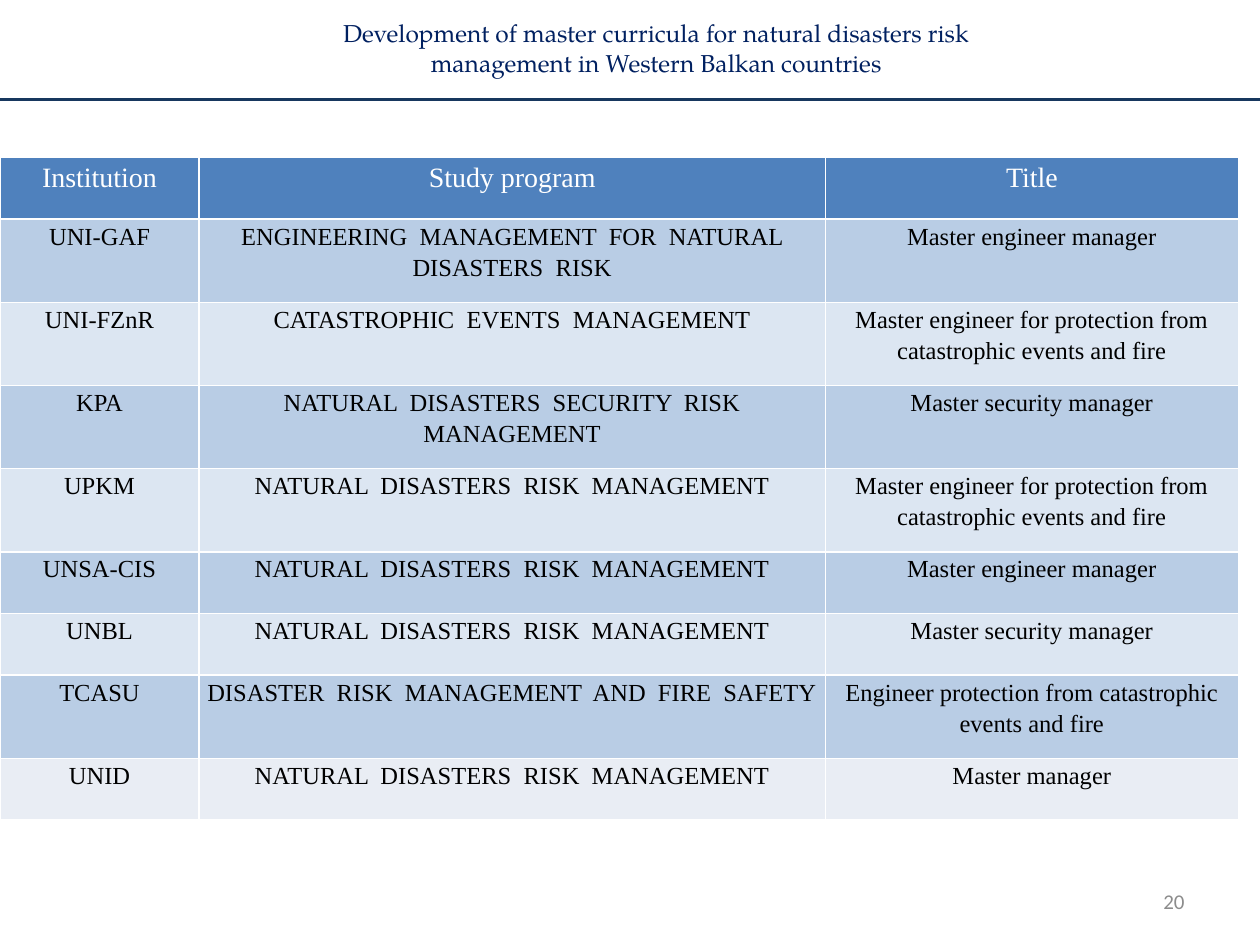
from typing import NamedTuple

from lxml import etree
from pptx import Presentation
from pptx.dml.color import RGBColor
from pptx.enum import shapes, text
from pptx.oxml.ns import qn
from pptx.util import Inches, Pt

NAVY = RGBColor(0x00, 0x20, 0x60)
RULE_BLUE = RGBColor(0x17, 0x37, 0x5E)
HEADER_BLUE = RGBColor(0x4F, 0x81, 0xBD)
BAND_DARK = RGBColor(0xB9, 0xCD, 0xE5)
BAND_LIGHT = RGBColor(0xDC, 0xE6, 0xF2)
LAST_ROW = RGBColor(0xE9, 0xED, 0xF4)
WHITE = RGBColor(0xFF, 0xFF, 0xFF)
BLACK = RGBColor(0x00, 0x00, 0x00)
GREY = RGBColor(0x8C, 0x8C, 0x8C)

COLUMN_WIDTHS = (1.58, 4.97, 3.28)
SHORT_ROW, TALL_ROW = 0.49, 0.66


class Program(NamedTuple):
    institution: str
    study: str
    title: str
    height: float = SHORT_ROW


class TextStyle(NamedTuple):
    font: str
    size: float
    color: RGBColor
    align: text.PP_ALIGN = text.PP_ALIGN.CENTER


COMMON_STUDY = "NATURAL  DISASTERS  RISK  MANAGEMENT"
FIRE_ENGINEER = "Master engineer for protection from catastrophic events and fire"
HEADER = Program("Institution", "Study program", "Title")
PROGRAMS = (
    Program("UNI-GAF", "ENGINEERING  MANAGEMENT  FOR  NATURAL DISASTERS  RISK",
            "Master engineer manager", TALL_ROW),
    Program("UNI-FZnR", "CATASTROPHIC  EVENTS  MANAGEMENT", FIRE_ENGINEER, TALL_ROW),
    Program("KPA", "NATURAL  DISASTERS  SECURITY  RISK MANAGEMENT",
            "Master security manager", TALL_ROW),
    Program("UPKM", COMMON_STUDY, FIRE_ENGINEER, TALL_ROW),
    Program("UNSA-CIS", COMMON_STUDY, "Master engineer manager"),
    Program("UNBL", COMMON_STUDY, "Master security manager"),
    Program("TCASU", "DISASTER  RISK  MANAGEMENT  AND  FIRE  SAFETY",
            "Engineer protection from catastrophic events and fire", TALL_ROW),
    Program("UNID", COMMON_STUDY, "Master manager"),
)

HEADER_STYLE = TextStyle("Times New Roman", 16, WHITE)
BODY_STYLE = TextStyle("Times New Roman", 14, BLACK)
TITLE_STYLE = TextStyle("TeX Gyre Pagella", 14, NAVY)
NUMBER_STYLE = TextStyle("Calibri", 12, GREY, text.PP_ALIGN.RIGHT)


def write(frame, words: str, style: TextStyle):
    """Fill a text frame with one styled paragraph and return it."""
    frame.text = words
    frame.word_wrap = True
    para = frame.paragraphs[0]
    para.alignment = style.align
    para.font.name = style.font
    para.font.size = Pt(style.size)
    para.font.color.rgb = style.color
    para.font.bold = False
    return para


def add_borders(cell, color: RGBColor, width: float) -> None:
    """Put the same line on all four sides of a cell, before its fill."""
    properties = cell._tc.get_or_add_tcPr()
    for index, side in enumerate(("a:lnL", "a:lnR", "a:lnT", "a:lnB")):
        line = etree.Element(qn(side), w=str(Pt(width)))
        fill = etree.SubElement(line, qn("a:solidFill"))
        etree.SubElement(fill, qn("a:srgbClr"), val=str(color))
        properties.insert(index, line)


def fill_cell(cell, words: str, style: TextStyle, fill: RGBColor) -> None:
    cell.margin_left = cell.margin_right = Inches(0.05)
    cell.margin_top = cell.margin_bottom = 0
    write(cell.text_frame, words, style).line_spacing = 1.15
    cell.fill.solid()
    cell.fill.fore_color.rgb = fill
    add_borders(cell, WHITE, 1)


def row_fill(index: int) -> RGBColor:
    if index == 0:
        return HEADER_BLUE
    if index == len(PROGRAMS):
        return LAST_ROW
    return BAND_DARK if index % 2 else BAND_LIGHT


def add_program_table(page) -> None:
    rows = (HEADER, *PROGRAMS)
    table = page.shapes.add_table(
        len(rows), len(COLUMN_WIDTHS), 0, Inches(1.25),
        Inches(sum(COLUMN_WIDTHS)), Inches(sum(row.height for row in rows))).table
    for column, width in zip(table.columns, COLUMN_WIDTHS):
        column.width = Inches(width)
    for index, program in enumerate(rows):
        table.rows[index].height = Inches(program.height)
        style = BODY_STYLE if index else HEADER_STYLE
        for cell, words in zip(table.rows[index].cells, program[:3]):
            fill_cell(cell, words, style, row_fill(index))


def main() -> None:
    deck = Presentation()
    deck.slide_width, deck.slide_height = Inches(10), Inches(7.5)
    page = deck.slides.add_slide(deck.slide_layouts[5])

    # Title
    title = page.shapes.title
    title.left, title.top = Inches(2.17), Inches(0.17)
    title.width, title.height = Inches(6.08), Inches(0.42)
    write(title.text_frame, "Development of master curricula for natural disasters "
          "risk management in Western Balkan countries", TITLE_STYLE)
    title.text_frame.auto_size = text.MSO_AUTO_SIZE.NONE
    title.text_frame.vertical_anchor = text.MSO_ANCHOR.MIDDLE

    # Rule under the title
    rule = page.shapes.add_connector(
        shapes.MSO_CONNECTOR.STRAIGHT, 0, Inches(0.79), Inches(10), Inches(0.79))
    rule.line.color.rgb = RULE_BLUE
    rule.line.width = Pt(2)
    etree.SubElement(rule._element.spPr, qn("a:effectLst"))

    # Study programs
    add_program_table(page)

    # Page number
    number = page.shapes.add_textbox(
        Inches(7.17), Inches(6.95), Inches(2.33), Inches(0.4))
    write(number.text_frame, "20", NUMBER_STYLE)
    number.text_frame.vertical_anchor = text.MSO_ANCHOR.MIDDLE

    deck.save("out.pptx")


if __name__ == "__main__":
    main()
